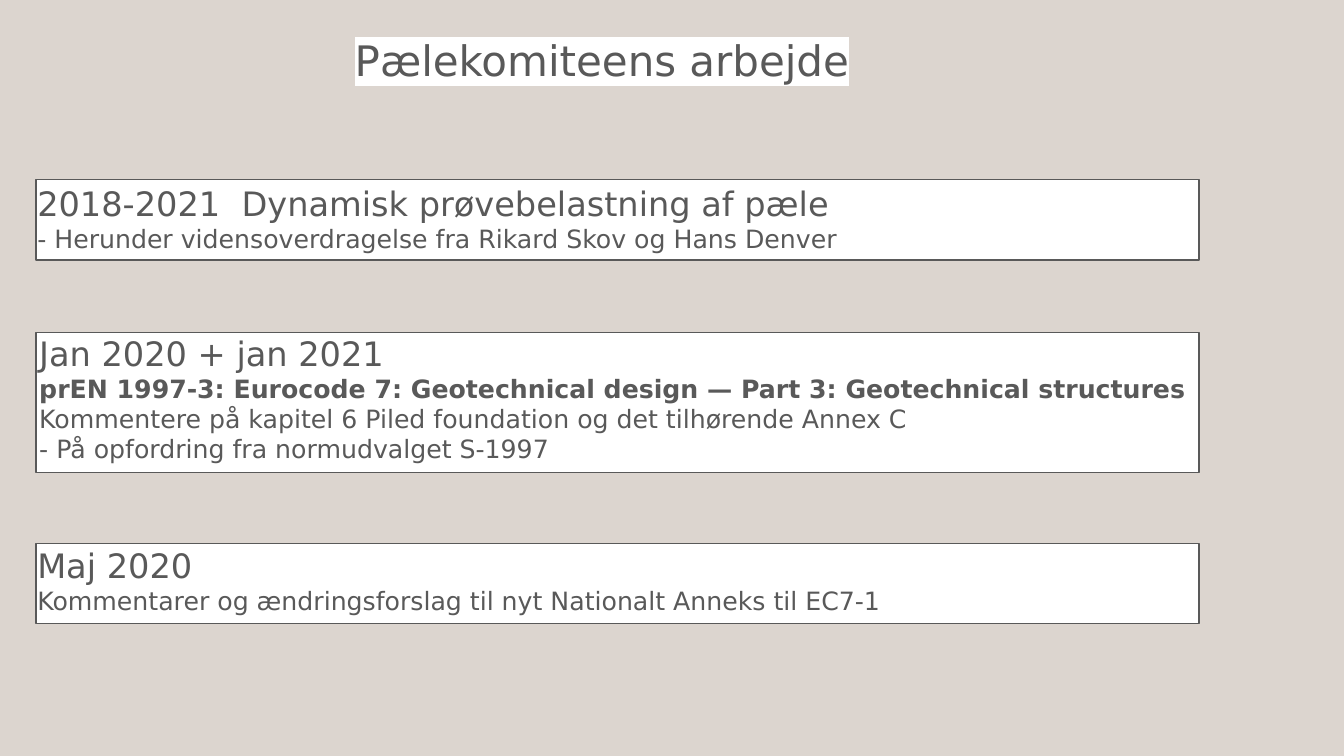
from lxml import etree
from pptx import Presentation
from pptx.dml.color import RGBColor
from pptx.enum import shapes, text
from pptx.oxml import ns
from pptx.util import Cm, Pt

SAND = RGBColor(0xDC, 0xD5, 0xCF)
WHITE = RGBColor(0xFF, 0xFF, 0xFF)
GREY = RGBColor(0x59, 0x59, 0x59)
FACE = "DejaVu Sans"
LEFT, WIDTH = 0.91, 29.31

# Panel top and height; text left, top, width and height; heading; lines with bold flag
PANELS = [
    (4.52, 2.03, (0.94, 4.6, 23.98, 1.8),
     "2018-2021  Dynamisk prøvebelastning af pæle",
     [("- Herunder vidensoverdragelse fra Rikard Skov og Hans Denver", False)]),
    (8.38, 3.53, (0.99, 8.38, 29.82, 3.33),
     "Jan 2020 + jan 2021",
     [("prEN 1997-3: Eurocode 7: Geotechnical design — Part 3: "
       "Geotechnical structures", True),
      ("Kommentere på kapitel 6 Piled foundation og det tilhørende Annex C", False),
      ("- På opfordring fra normudvalget S-1997", False)]),
    (13.69, 2.03, (0.94, 13.74, 29.82, 1.8),
     "Maj 2020",
     [("Kommentarer og ændringsforslag til nyt Nationalt Anneks til EC7-1", False)]),
]


def style(para, size, bold=False):
    para.alignment = text.PP_ALIGN.LEFT
    font = para.font
    font.name, font.size, font.bold = FACE, Pt(size), bold
    font.color.rgb = GREY


def fit(frame):
    frame.margin_left = frame.margin_right = 0
    frame.margin_top = frame.margin_bottom = 0
    frame.vertical_anchor = text.MSO_ANCHOR.TOP
    frame.word_wrap = True
    frame.auto_size = text.MSO_AUTO_SIZE.SHAPE_TO_FIT_TEXT


def mark(run, color):
    """Highlight a run."""
    light = etree.SubElement(run._r.get_or_add_rPr(), ns.qn("a:highlight"))
    etree.SubElement(light, ns.qn("a:srgbClr"), val=str(color))


def add_title(slide, words):
    title = slide.shapes.title
    title.left, title.top = Cm(8.94), Cm(0.86)
    title.width, title.height = Cm(13.49), Cm(1.27)
    fit(title.text_frame)
    para = title.text_frame.paragraphs[0]
    run = para.add_run()
    run.text = words
    style(para, 30)
    mark(run, WHITE)


def add_panel(slide, top, height, place, head, lines):
    # Framed white panel
    panel = slide.shapes.add_shape(shapes.MSO_SHAPE.RECTANGLE, Cm(LEFT),
                                   Cm(top), Cm(WIDTH), Cm(height))
    panel.shadow.inherit = False
    panel.fill.solid()
    panel.fill.fore_color.rgb = WHITE
    panel.line.color.rgb = GREY
    panel.line.width = Pt(1)

    # Heading and lines
    frame = slide.shapes.add_textbox(*map(Cm, place)).text_frame
    fit(frame)
    para = frame.paragraphs[0]
    para.text = head
    style(para, 24)
    for words, bold in lines:
        para = frame.add_paragraph()
        para.text = words
        style(para, 18, bold)


def main():
    deck = Presentation()
    deck.slide_width, deck.slide_height = Cm(33.87), Cm(19.05)
    slide = deck.slides.add_slide(deck.slide_layouts.get_by_name("Title Only"))
    slide.background.fill.solid()
    slide.background.fill.fore_color.rgb = SAND

    add_title(slide, "Pælekomiteens arbejde")
    for panel in PANELS:
        add_panel(slide, *panel)
    deck.save("out.pptx")


if __name__ == "__main__":
    main()
